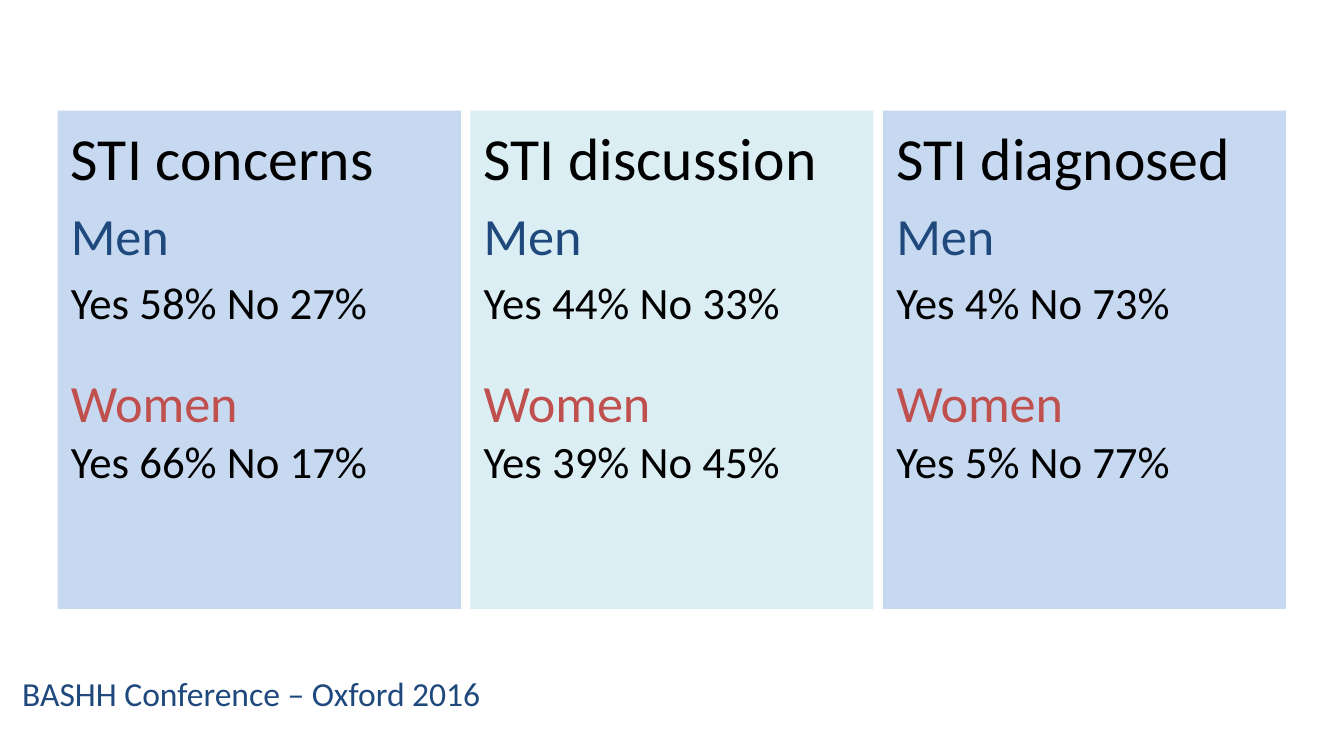
from pptx import Presentation
from pptx.dml.color import RGBColor
from pptx.enum.shapes import MSO_SHAPE as Shape
from pptx.enum.text import MSO_ANCHOR as Anchor, PP_ALIGN as Align
from pptx.util import Cm, Pt

BLACK = RGBColor(0x00, 0x00, 0x00)
NAVY = RGBColor(0x1F, 0x49, 0x7D)
RED = RGBColor(0xC0, 0x50, 0x4D)
BLUE = RGBColor(0xC6, 0xD9, 0xF1)
AQUA = RGBColor(0xDB, 0xEE, 0xF4)

FONT = "Calibri"
FOOTER = "BASHH Conference – Oxford 2016"
PANELS = [
    ("STI concerns", "Yes 58% No 27%", "Yes 66% No 17%", BLUE),
    ("STI discussion", "Yes 44% No 33%", "Yes 39% No 45%", AQUA),
    ("STI diagnosed", "Yes 4% No 73%", "Yes 5% No 77%", BLUE),
]
LEFT, TOP, WIDTH, HEIGHT, GAP = 1.09, 2.09, 7.62, 9.42, 0.18


def add_line(para, text, size, color, before=0, lines=1.0):
    para.alignment = Align.LEFT
    para.space_before = Pt(before)
    para.line_spacing = lines
    run = para.add_run()
    run.text = text
    run.font.name = FONT
    run.font.size = Pt(size)
    run.font.color.rgb = color


def add_panel(slide, left, title, men, women, fill):
    box = slide.shapes.add_shape(
        Shape.RECTANGLE, Cm(left), Cm(TOP), Cm(WIDTH), Cm(HEIGHT))
    box.shadow.inherit = False
    box.fill.solid()
    box.fill.fore_color.rgb = fill
    box.line.fill.background()
    frame = box.text_frame
    frame.word_wrap = True
    frame.vertical_anchor = Anchor.TOP
    frame.margin_top = Cm(0.2)
    rows = [
        (title, 32, BLACK),
        ("Men", 28, NAVY, 5.6),
        (men, 24, BLACK, 4.8),
        ("Women", 28, RED, 5.6, 1.5),
        (women, 24, BLACK),
    ]
    for i, row in enumerate(rows):
        para = frame.add_paragraph() if i else frame.paragraphs[0]
        add_line(para, *row)


def main():
    deck = Presentation()
    deck.slide_width, deck.slide_height = Cm(25.4), Cm(14.29)
    slide = deck.slides.add_slide(deck.slide_layouts[6])

    foot = slide.shapes.add_textbox(Cm(0.17), Cm(12.6), Cm(12.14), Cm(1.69))
    foot.text_frame.word_wrap = True
    add_line(foot.text_frame.paragraphs[0], FOOTER, 18, NAVY)

    for i, panel in enumerate(PANELS):
        add_panel(slide, LEFT + i * (WIDTH + GAP), *panel)

    deck.save("out.pptx")


if __name__ == "__main__":
    main()
